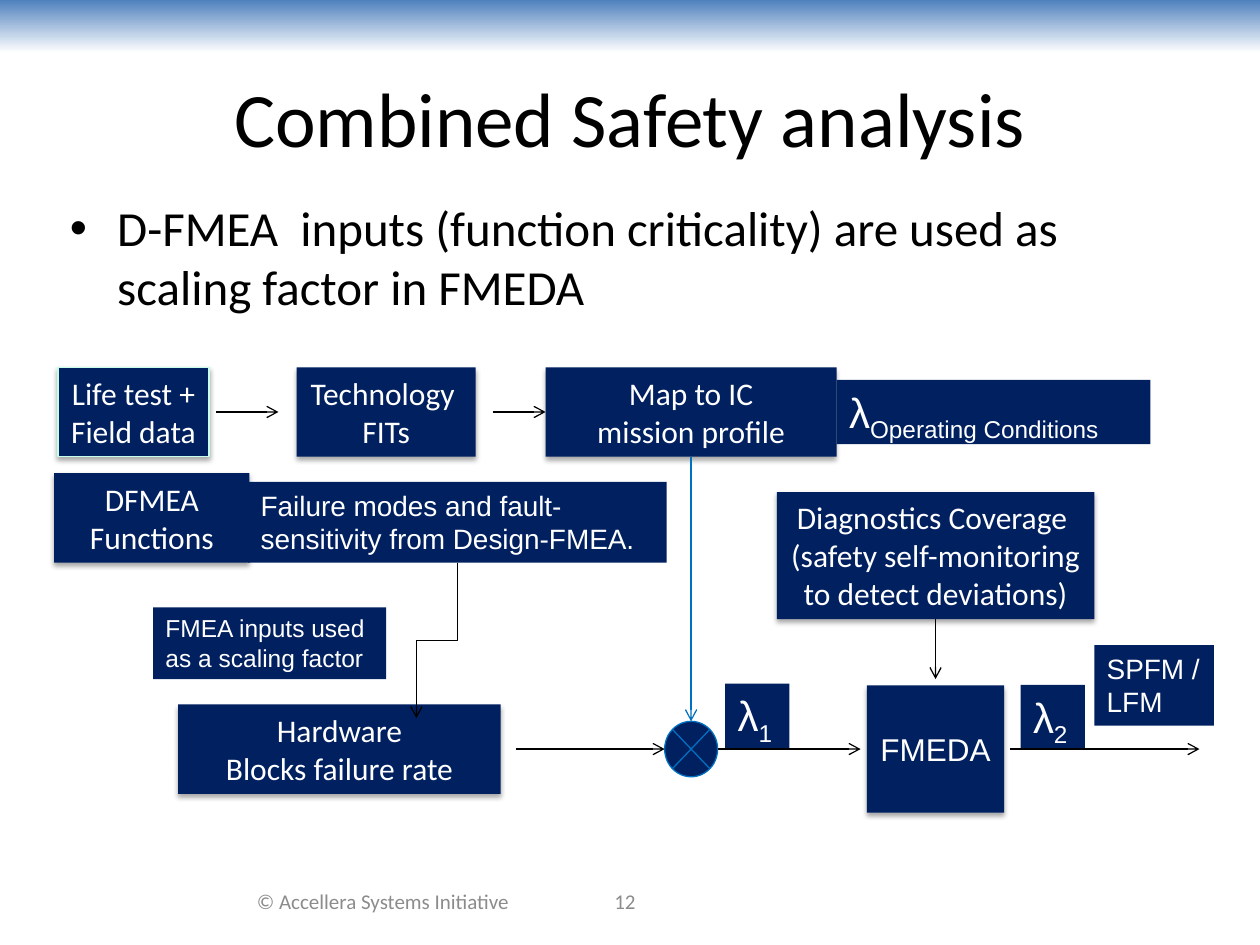
from dataclasses import dataclass
from typing import Optional

import pptx
import pptx.dml.color
import pptx.enum.dml
import pptx.enum.shapes
import pptx.enum.text
import pptx.oxml
import pptx.oxml.ns
import pptx.util

SHAPE = pptx.enum.shapes.MSO_SHAPE
CONNECTOR = pptx.enum.shapes.MSO_CONNECTOR
ALIGN = pptx.enum.text.PP_ALIGN
ANCHOR = pptx.enum.text.MSO_ANCHOR
NO_FIT = pptx.enum.text.MSO_AUTO_SIZE.NONE

COLUMNS, ROWS = 100, 75
NAVY, BLUE, BLACK, WHITE, GREY = "002060", "0070C0", "000000", "FFFFFF", "8C8C8C"
TOP, LEFT, BOTTOM = 0, 1, 2
FLOW_ROW = 59.45  # axis of the lower arrow chain
TEST_ROW = 32.7  # axis of the upper arrow chain
MIX_COL = 54.85  # axis of the summing junction

prs = pptx.Presentation()
prs.slide_width = pptx.util.Inches(10)
prs.slide_height = pptx.util.Inches(7.5)


@dataclass(frozen=True)
class Box:
    """A navy box; col, row, cols and rows are in grid units."""
    key: str
    col: float
    row: float
    cols: float
    rows: float
    lines: tuple[str, ...]
    size: float = 18
    font: str = "Calibri"
    sub: str = ""
    raised: bool = True
    outline: Optional[str] = None
    anchor: ANCHOR = ANCHOR.MIDDLE


@dataclass(frozen=True)
class Arrow:
    start: tuple[float, float]
    end: tuple[float, float]
    color: str = BLACK
    source: Optional[tuple[str, int]] = None
    target: Optional[tuple[str, int]] = None


def label(key: str, col: float, row: float, cols: float, rows: float,
          lines: tuple[str, ...], size: float, sub: str = "") -> Box:
    """A flat box with left-aligned Arial text."""
    return Box(key, col, row, cols, rows, lines, size, "Arial", sub, False, None, ANCHOR.TOP)


BOXES = [
    Box("Technology", 23.55, 29.15, 14.2, 7.1, ("Technology ", "FITs")),
    Box("DFMEA", 4.3, 37.55, 15.5, 7.1, ("DFMEA", "Functions")),
    Box("Hardware", 14.15, 55.9, 25.6, 7.1, ("Hardware", "Blocks failure rate")),
    label("Lambda 1", 57.55, 54.25, 5.1, 5.1, ("λ",), 24, "1"),
    label("Lambda 2", 81, 54.35, 5.1, 5.1, ("λ",), 24, "2"),
    Box("Mission profile", 43.3, 29.15, 23.1, 7.1, ("Map to IC", "mission profile")),
    Box("Life test", 4.6, 29.15, 12, 7.1, ("Life test +", "Field data"), outline="C5FFE9"),
    label("Metrics", 86.85, 51.2, 9.5, 6.4, ("SPFM /", "LFM"), 16),
    Box("FMEDA", 68.8, 54.4, 10.9, 10.1, ("FMEDA",), font="Arial"),
    Box("Diagnostics", 61.65, 39.05, 25.2, 10.1,
        ("Diagnostics Coverage ", "(safety self-monitoring", "to detect deviations)"),
        anchor=ANCHOR.TOP),
    label("Scaling factor", 12.15, 48.2, 18.5, 5.7,
          ("FMEA inputs used", "as a scaling factor"), 14),
    label("Lambda operating", 66.4, 30.15, 24.9, 5.1, ("λ",), 24, "Operating Conditions"),
    label("Failure modes", 19.7, 38.25, 33.2, 6.4,
          ("Failure modes and fault-sensitivity from Design-FMEA.",), 16),
]

ARROWS = [
    Arrow((17.15, TEST_ROW), (22.1, TEST_ROW)),
    Arrow((39.1, TEST_ROW), (43.3, TEST_ROW), target=("Mission profile", LEFT)),
    Arrow((MIX_COL, 36.25), (MIX_COL, 57.25), BLUE, source=("Mission profile", BOTTOM)),
    Arrow((74.25, 49.15), (74.25, 53.9), source=("Diagnostics", BOTTOM)),
    Arrow((40.95, FLOW_ROW), (52.75, FLOW_ROW)),
    Arrow((57, FLOW_ROW), (68.3, FLOW_ROW)),
    Arrow((80.2, FLOW_ROW), (95.2, FLOW_ROW)),
]


def x(cols: float) -> int:
    return round(prs.slide_width * cols / COLUMNS)


def y(rows: float) -> int:
    return round(prs.slide_height * rows / ROWS)


def area(col: float, row: float, cols: float, rows: float) -> tuple[int, int, int, int]:
    return x(col), y(row), x(cols), y(rows)


def rgb(color: str) -> pptx.dml.color.RGBColor:
    return pptx.dml.color.RGBColor.from_string(color)


def apply(target, values: dict) -> None:
    for key, value in values.items():
        setattr(target, key, value)


def add_run(p, text: str, size: float, font: str, color: str):
    r = p.add_run()
    r.text = text
    apply(r.font, {"size": pptx.util.Pt(size), "name": font})
    r.font.color.rgb = rgb(color)
    return r


def set_line(s, color: str) -> None:
    s.line.color.rgb = rgb(color)
    s.line.width = pptx.util.Pt(0.75)


def add_xml(parent, xml: str) -> None:
    parent.append(pptx.oxml.parse_xml(xml.replace(" ", f" {pptx.oxml.ns.nsdecls('a')} ", 1)))


def add_filled(s, kind: SHAPE, place: tuple[int, int, int, int], outline: Optional[str]):
    sp = s.shapes.add_shape(kind, *place)
    sp.shadow.inherit = False
    sp.fill.solid()
    sp.fill.fore_color.rgb = rgb(NAVY)
    if outline:
        set_line(sp, outline)
    else:
        sp.line.fill.background()
    return sp


def raise_shape(sp) -> None:
    """Replace the empty effect list by a soft shadow below the shape."""
    effects = sp._element.spPr.find(pptx.oxml.ns.qn("a:effectLst"))
    add_xml(effects, '<a:outerShdw blurRad="39370" dist="22860" dir="5400000" rotWithShape="0">'
                     '<a:srgbClr val="000000"><a:alpha val="35000"/></a:srgbClr></a:outerShdw>')


def add_box(s, box: Box):
    sp = add_filled(s, SHAPE.RECTANGLE, area(box.col, box.row, box.cols, box.rows), box.outline)
    if box.raised:
        raise_shape(sp)
    tf = sp.text_frame
    apply(tf, {"word_wrap": not box.raised, "vertical_anchor": box.anchor, "auto_size": NO_FIT})
    for i, line in enumerate(box.lines):
        p = tf.add_paragraph() if i else tf.paragraphs[0]
        p.alignment = ALIGN.CENTER if box.raised else ALIGN.LEFT
        add_run(p, line, box.size, box.font, WHITE)
    if box.sub:
        r = add_run(p, box.sub, box.size, box.font, WHITE)
        r.font._element.set("baseline", "-25000")
    return sp


def style_arrow(c, color: str) -> None:
    set_line(c, color)
    add_xml(c.line._get_or_add_ln(), '<a:tailEnd type="arrow"/>')
    add_xml(c._element.spPr, "<a:effectLst />")


def add_arrow(s, arrow: Arrow, boxes: dict) -> None:
    (x1, y1), (x2, y2) = arrow.start, arrow.end
    c = s.shapes.add_connector(CONNECTOR.STRAIGHT, x(x1), y(y1), x(x2), y(y2))
    if arrow.source:
        c.begin_connect(boxes[arrow.source[0]], arrow.source[1])
    if arrow.target:
        c.end_connect(boxes[arrow.target[0]], arrow.target[1])
    style_arrow(c, arrow.color)


def add_elbow_down(s, source, end: tuple[float, float]) -> None:
    """Elbow from the bottom of source, left and down to end, as a quarter-turned connector."""
    x1, y1 = source.left + source.width // 2, source.top + source.height
    x2, y2 = x(end[0]), y(end[1])
    c = s.shapes.add_connector(CONNECTOR.ELBOW, x1, y1, x1 + y2 - y1, y1 + x1 - x2)
    c.begin_connect(source, BOTTOM)
    width, height = y2 - y1, x1 - x2
    apply(c, {"left": (x1 + x2 - width) // 2, "top": (y1 + y2 - height) // 2,
              "width": width, "height": height})
    c._element.spPr.get_or_add_xfrm().set("rot", "5400000")
    style_arrow(c, BLACK)


def add_band(s) -> None:
    sp = s.shapes.add_shape(SHAPE.RECTANGLE, *area(0, 0, COLUMNS, 4.2))
    sp.shadow.inherit = False
    sp.line.fill.background()
    sp.fill.gradient()
    sp.fill.gradient_angle = 270
    for stop, (position, color) in zip(sp.fill.gradient_stops, [(0, "4F81BD"), (1, WHITE)]):
        stop.position = position
        stop.color.rgb = rgb(color)


def fill_placeholder(sp, place: tuple[int, int, int, int], text: str, size: float) -> None:
    apply(sp, dict(zip(("left", "top", "width", "height"), place)))
    sp.text_frame.auto_size = NO_FIT
    p = sp.text_frame.paragraphs[0]
    p.space_before = pptx.util.Pt(0)
    add_run(p, text, size, "Calibri", BLACK)


def add_footer(s, col: float, cols: float, text: str) -> None:
    tf = s.shapes.add_textbox(*area(col, 69.5, cols, 4)).text_frame
    apply(tf, {"word_wrap": True, "vertical_anchor": ANCHOR.MIDDLE})
    tf.paragraphs[0].alignment = ALIGN.CENTER
    add_run(tf.paragraphs[0], text, 12, "Calibri", GREY)


def main() -> None:
    s = prs.slides.add_slide(prs.slide_layouts[1])
    add_band(s)
    fill_placeholder(s.shapes.title, area(5, 3, 90, 12.5), "Combined Safety analysis", 44)
    fill_placeholder(s.placeholders[1], area(4.55, 15.2, 90, 49.2),
                     "D-FMEA  inputs (function criticality) are used as scaling factor in FMEDA", 28)
    add_footer(s, 18.3, 24.2, "© Accellera Systems Initiative")
    add_footer(s, 40, 19.2, "12")
    boxes = {box.key: add_box(s, box) for box in BOXES}
    add_filled(s, SHAPE.FLOWCHART_SUMMING_JUNCTION, area(52.75, 57.25, 4.2, 4.4), BLUE)
    for arrow in ARROWS:
        add_arrow(s, arrow, boxes)
    add_elbow_down(s, boxes["Failure modes"], (33.05, 57))
    prs.save("out.pptx")


if __name__ == "__main__":
    main()
